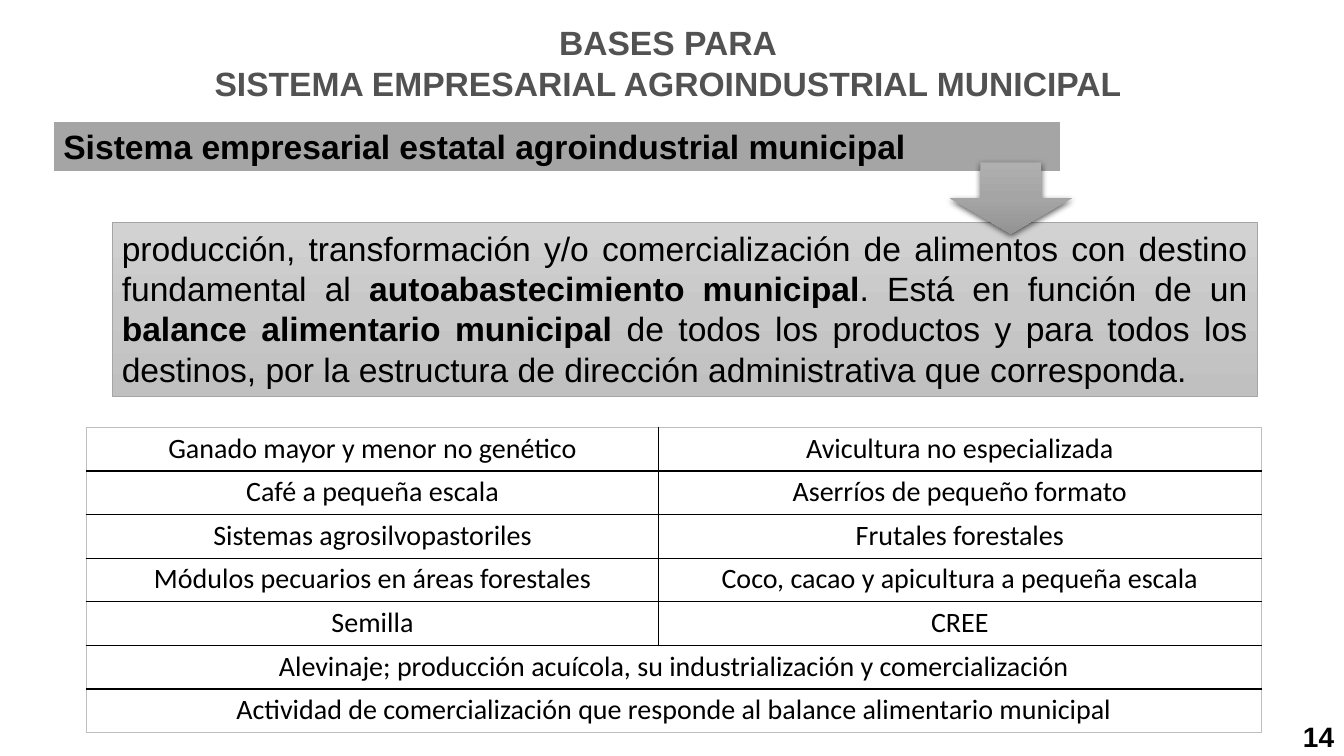
from copy import deepcopy
from dataclasses import dataclass

from lxml.etree import SubElement
from pptx import Presentation
from pptx.dml.color import RGBColor
from pptx.enum.shapes import MSO_SHAPE
from pptx.enum.text import MSO_ANCHOR, PP_ALIGN
from pptx.oxml.ns import qn
from pptx.util import Inches, Pt


@dataclass
class Theme:
    font: str = "Arial"
    grid_font: str = "Calibri"
    head: int = 24
    small: int = 20
    ink: str = "000000"
    title: str = "525252"
    grey: str = "A5A5A5"
    edge: str = "BFBFBF"
    paper: str = "FFFFFF"
    panel: tuple = ("D2D2D2", "C8C8C8", "C0C0C0")
    arrow: tuple = ("AFAFAF", "A5A5A5", "939393")


ROWS = [
    ("Ganado mayor y menor no genético", "Avicultura no especializada"),
    ("Café a pequeña escala", "Aserríos de pequeño formato"),
    ("Sistemas agrosilvopastoriles", "Frutales forestales"),
    ("Módulos pecuarios en áreas forestales",
     "Coco, cacao y apicultura a pequeña escala"),
    ("Semilla", "CREE"),
    ("Alevinaje; producción acuícola, su industrialización y comercialización",),
    ("Actividad de comercialización que responde al balance alimentario municipal",),
]
BODY = [
    ("producción, transformación y/o comercialización de alimentos con destino "
     "fundamental al ", False),
    ("autoabastecimiento municipal", True),
    (". Está en función de un ", False),
    ("balance alimentario municipal ", True),
    ("de todos los productos y para todos los destinos, por la estructura de "
     "dirección administrativa que corresponda.", False),
]


class Deck:
    def __init__(self, theme):
        self.theme = theme
        self.prs = Presentation()
        self.prs.slide_width, self.prs.slide_height = Inches(13.33), Inches(7.5)
        self.slide = self.prs.slides.add_slide(self.prs.slide_layouts[6])

    def style(self, run, size, color, bold, font=None):
        run.font.name = font or self.theme.font
        run.font.size = Pt(size)
        run.font.bold = bold
        run.font.color.rgb = RGBColor.from_string(color)

    def label(self, frame, lines, size, color, align, anchor=MSO_ANCHOR.TOP):
        """Fill a frame; each line is a list of (text, bold) runs."""
        frame.word_wrap = True
        frame.vertical_anchor = anchor
        for i, parts in enumerate(lines):
            para = frame.add_paragraph() if i else frame.paragraphs[0]
            para.alignment = align
            for text, bold in parts:
                run = para.add_run()
                run.text = text
                self.style(run, size, color, bold)

    def text(self, box, lines, size, color, align, anchor=MSO_ANCHOR.TOP):
        area = self.slide.shapes.add_textbox(*map(Inches, box))
        self.label(area.text_frame, lines, size, color, align, anchor)

    def shape(self, kind, box, fill, line=None, width=0):
        """Add a shape; a tuple of three colours gives a downward gradient."""
        item = self.slide.shapes.add_shape(kind, *map(Inches, box))
        item.shadow.inherit = False
        if isinstance(fill, tuple):
            self.blend(item, fill)
        else:
            item.fill.solid()
            item.fill.fore_color.rgb = RGBColor.from_string(fill)
        if line:
            item.line.color.rgb = RGBColor.from_string(line)
            item.line.width = Pt(width)
        else:
            item.line.fill.background()
        return item

    def blend(self, item, colors):
        item.fill.gradient()
        item.fill.gradient_angle = 270
        first = item._element.spPr.find(f".//{qn('a:gs')}")
        first.addnext(deepcopy(first))
        for i, (stop, color) in enumerate(zip(item.fill.gradient_stops, colors)):
            stop.position = i / 2
            stop.color.rgb = RGBColor.from_string(color)

    def shade(self, item):
        """Drop a soft shadow straight down."""
        effect = item._element.spPr.find(qn("a:effectLst"))
        outer = SubElement(effect, qn("a:outerShdw"), blurRad=str(Pt(4.5)),
                           dist=str(Pt(1.5)), dir="5400000", rotWithShape="0")
        color = SubElement(outer, qn("a:srgbClr"), val=self.theme.ink)
        SubElement(color, qn("a:alpha"), val="63000")

    def border(self, cell, sides):
        """Draw the sides, given as tag and whether it is an outer edge."""
        props = cell._tc.get_or_add_tcPr()
        for i, (side, outer) in enumerate(sides):
            line = props.makeelement(qn(f"a:{side}"),
                                     {"w": str(Pt(0.5 if outer else 1))})
            props.insert(i, line)
            fill = SubElement(line, qn("a:solidFill"))
            SubElement(fill, qn("a:srgbClr"),
                       val=self.theme.edge if outer else self.theme.ink)

    def table(self, box, widths, rows):
        last, end = len(rows) - 1, len(widths) - 1
        grid = self.slide.shapes.add_table(
            len(rows), len(widths), *map(Inches, box)).table
        grid.first_row = grid.horz_banding = False
        for col, width in zip(grid.columns, widths):
            col.width = Inches(width)
        for r, texts in enumerate(rows):
            whole = len(texts) == 1
            if whole:
                grid.cell(r, 0).merge(grid.cell(r, end))
            for c in range(len(widths)):
                cell = grid.cell(r, c)
                cell.fill.background()
                cell.margin_left = cell.margin_right = Inches(0.13)
                cell.margin_top = cell.margin_bottom = Inches(0.04)
                self.border(cell, [("lnL", c == 0), ("lnR", whole or c == end),
                                   ("lnT", r == 0), ("lnB", r == last)])
                if c < len(texts):
                    para = cell.text_frame.paragraphs[0]
                    para.text = texts[c]
                    para.alignment = PP_ALIGN.CENTER
                    self.style(para.runs[0], self.theme.small, self.theme.ink,
                               False, self.theme.grid_font)


def main():
    theme = Theme()
    deck = Deck(theme)
    bar = deck.shape(MSO_SHAPE.RECTANGLE, (0.53, 1.2, 9.99, 0.51),
                     theme.grey, theme.paper, 1.5)
    deck.label(bar.text_frame,
               [[("Sistema empresarial estatal agroindustrial municipal", True)]],
               theme.head, theme.ink, PP_ALIGN.LEFT)
    deck.text((0.79, 0.17, 11.67, 0.91),
              [[("BASES PARA", True)],
               [("SISTEMA EMPRESARIAL AGROINDUSTRIAL MUNICIPAL", True)]],
              theme.head, theme.title, PP_ALIGN.CENTER)
    deck.table((0.86, 4.24, 11.65, 3.03), (5.67, 5.98), ROWS)
    deck.text((12.44, 7.15, 0.89, 0.3), [[("14", True)]],
              theme.small, theme.ink, PP_ALIGN.RIGHT, MSO_ANCHOR.MIDDLE)
    panel = deck.shape(MSO_SHAPE.RECTANGLE, (1.11, 2.21, 11.36, 1.72),
                       theme.panel, theme.grey, 0.5)
    deck.label(panel.text_frame, [BODY], theme.head, theme.ink,
               PP_ALIGN.JUSTIFY)
    arrow = deck.shape(MSO_SHAPE.DOWN_ARROW, (9.42, 1.61, 1.21, 0.71),
                       theme.arrow)
    deck.shade(arrow)
    deck.prs.save("out.pptx")


if __name__ == "__main__":
    main()
